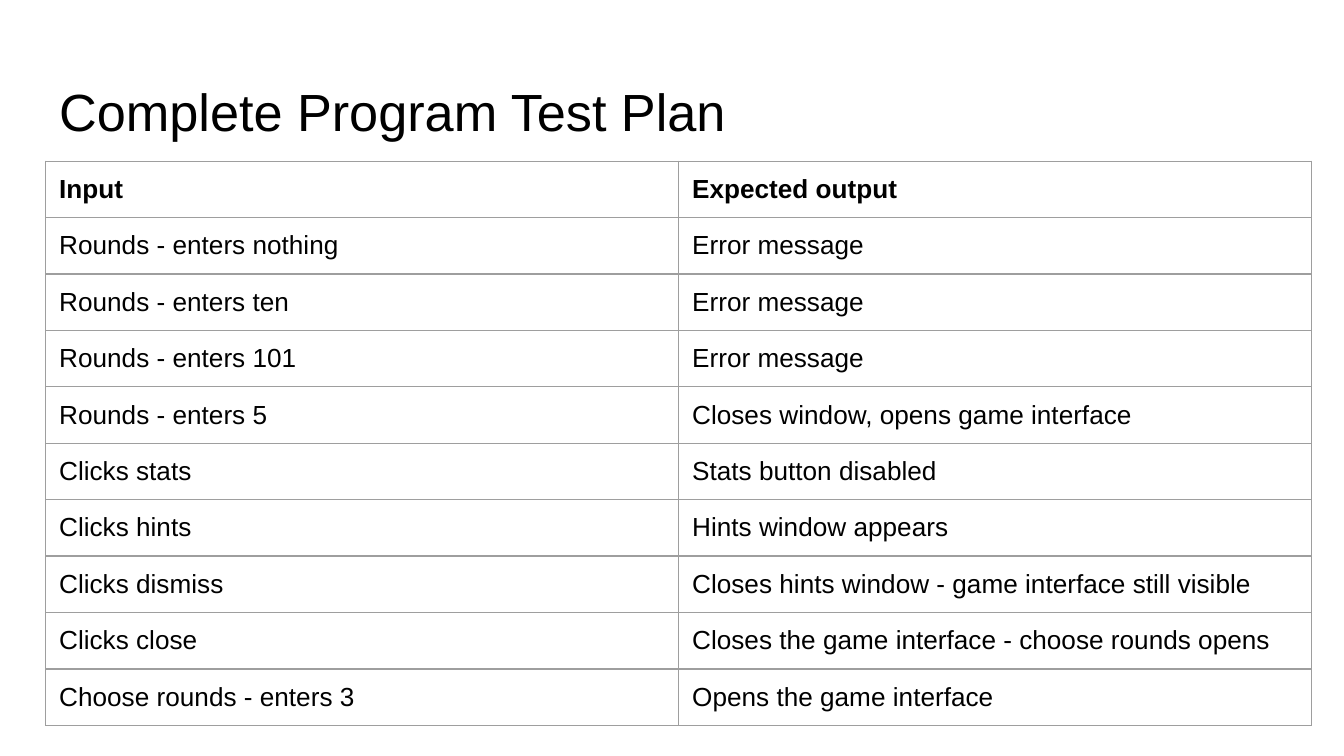
from dataclasses import dataclass

from lxml.etree import SubElement
from pptx import Presentation
from pptx.dml.color import RGBColor
from pptx.enum.text import MSO_ANCHOR, MSO_AUTO_SIZE, PP_ALIGN
from pptx.oxml.ns import qn
from pptx.util import Inches, Pt

TITLE = "Complete Program Test Plan"
HEADER = ("Input", "Expected output")
TESTS = [
    ("Rounds - enters nothing", "Error message"),
    ("Rounds - enters ten", "Error message"),
    ("Rounds - enters 101", "Error message"),
    ("Rounds - enters 5", "Closes window, opens game interface"),
    ("Clicks stats", "Stats button disabled"),
    ("Clicks hints", "Hints window appears"),
    ("Clicks dismiss", "Closes hints window - game interface still visible"),
    ("Clicks close", "Closes the game interface - choose rounds opens"),
    ("Choose rounds - enters 3", "Opens the game interface"),
]


@dataclass(frozen=True)
class Theme:
    font: str = "Arial"
    text: str = "000000"
    border: str = "9E9E9E"
    background: str = "FFFFFF"
    title_size: int = 28
    cell_size: int = 14
    border_width: float = 0.75


THEME = Theme()
SLIDE_WIDTH = 10
SLIDE_HEIGHT = SLIDE_WIDTH * 9 / 16
LEFT = 0.34
TABLE_TOP = 1.2
COLUMN_WIDTH = 4.71
ROW_HEIGHT = 0.42
PADDING = 0.1


def style_text(paragraph, size, bold=False):
    paragraph.alignment = PP_ALIGN.LEFT
    for run in paragraph.runs:
        run.font.name = THEME.font
        run.font.size = Pt(size)
        run.font.bold = bold
        run.font.color.rgb = RGBColor.from_string(THEME.text)


def set_padding(box):
    box.margin_left = box.margin_right = Inches(PADDING)
    box.margin_top = box.margin_bottom = Inches(PADDING)


def add_borders(cell):
    properties = cell._tc.get_or_add_tcPr()
    for position, side in enumerate(("a:lnL", "a:lnR", "a:lnT", "a:lnB")):
        line = SubElement(properties, qn(side), w=str(Pt(THEME.border_width)))
        fill = SubElement(line, qn("a:solidFill"))
        SubElement(fill, qn("a:srgbClr"), val=THEME.border)
        properties.insert(position, line)  # borders precede the cell fill


def add_title(slide):
    title = slide.shapes.title
    title.left, title.top = Inches(LEFT), Inches(0.49)
    title.width, title.height = Inches(9.32), Inches(0.63)
    frame = title.text_frame
    frame.text = TITLE
    frame.word_wrap = True
    frame.auto_size = MSO_AUTO_SIZE.NONE
    frame.vertical_anchor = MSO_ANCHOR.TOP
    set_padding(frame)
    style_text(frame.paragraphs[0], THEME.title_size)


def add_test_table(slide):
    rows = [HEADER, *TESTS]
    table = slide.shapes.add_table(
        len(rows), len(HEADER), Inches(LEFT), Inches(TABLE_TOP),
        Inches(COLUMN_WIDTH * len(HEADER)), Inches(ROW_HEIGHT * len(rows)),
    ).table
    table.horz_banding = False
    for column in table.columns:
        column.width = Inches(COLUMN_WIDTH)
    for row_index, row in enumerate(rows):
        table.rows[row_index].height = Inches(ROW_HEIGHT)
        for column_index, wording in enumerate(row):
            cell = table.cell(row_index, column_index)
            cell.text = wording
            cell.fill.background()
            set_padding(cell)
            style_text(cell.text_frame.paragraphs[0], THEME.cell_size, bold=row_index == 0)
            add_borders(cell)


def main():
    presentation = Presentation()
    presentation.slide_width = Inches(SLIDE_WIDTH)
    presentation.slide_height = Inches(SLIDE_HEIGHT)
    slide = presentation.slides.add_slide(presentation.slide_layouts[5])
    slide.background.fill.solid()
    slide.background.fill.fore_color.rgb = RGBColor.from_string(THEME.background)
    add_title(slide)
    add_test_table(slide)
    presentation.save("out.pptx")


if __name__ == "__main__":
    main()
